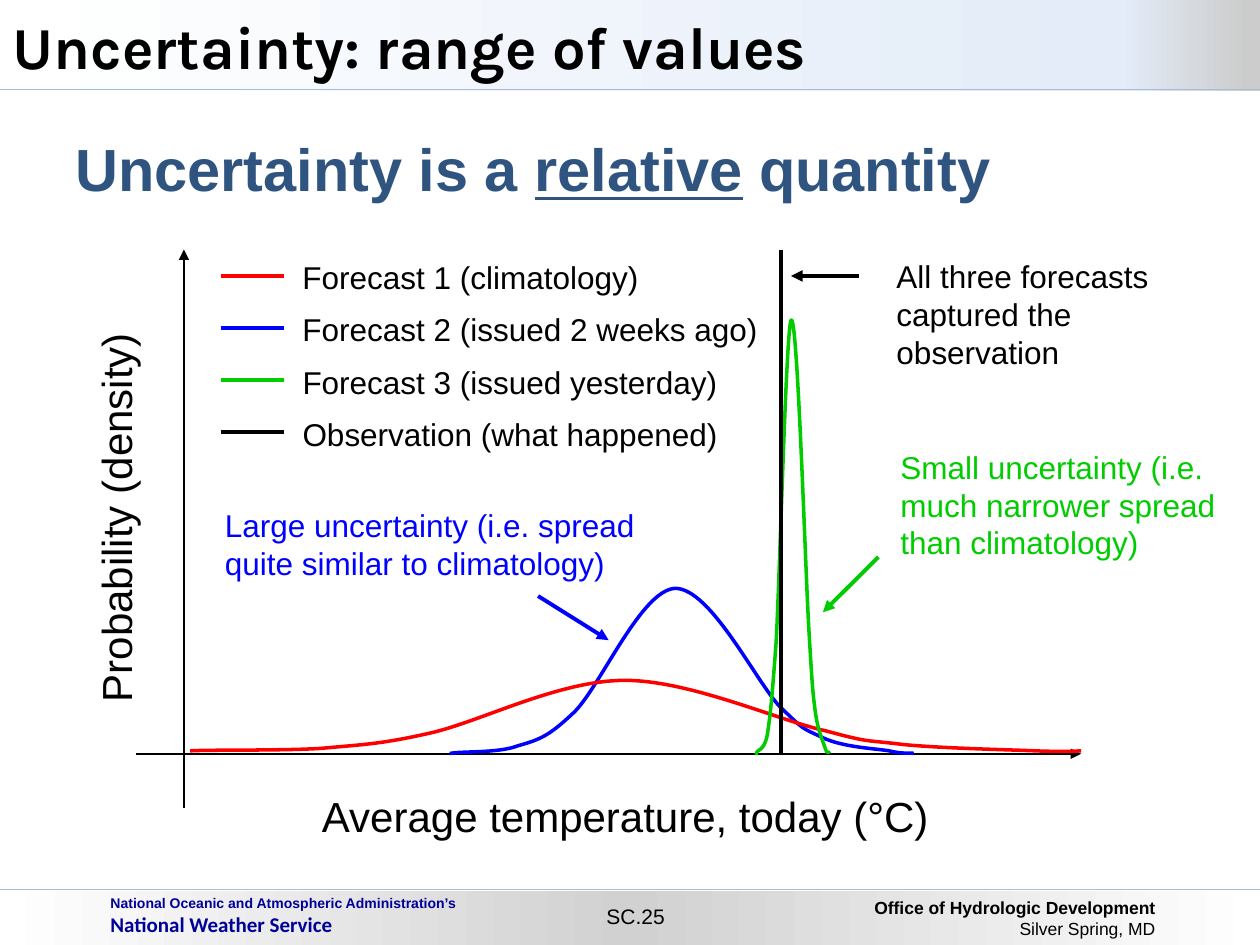
import dataclasses

import lxml.etree
import pptx
import pptx.dml.color
import pptx.enum.shapes
import pptx.enum.text
import pptx.oxml.ns
import pptx.util

Pt = pptx.util.Pt
RGBColor = pptx.dml.color.RGBColor
qn = pptx.oxml.ns.qn
ALIGN = pptx.enum.text.PP_ALIGN
ANCHOR = pptx.enum.text.MSO_ANCHOR

BLACK = RGBColor(0, 0, 0)
WHITE = RGBColor(255, 255, 255)
RED = RGBColor(255, 0, 0)
BLUE = RGBColor(0, 0, 255)
GREEN = RGBColor(0, 0xCC, 0)
NAVY = RGBColor(0, 0, 0x99)
STEEL = RGBColor(0x30, 0x54, 0x80)
RULE = RGBColor(0xA4, 0xBD, 0xDC)
PALE_BLUE = RGBColor(0xE3, 0xEC, 0xF8)
SILVER = RGBColor(0xCC, 0xCC, 0xCC)
GREY = RGBColor(0xD1, 0xD1, 0xD1)

CLIMATOLOGY = [
    (38.7, 289.1), (50.2, 288.4), (90.6, 289.1), (113.6, 287.7), (136.6, 285.5),
    (146.7, 285.5), (175.5, 279), (204.3, 272.6), (249, 248.8), (287.1, 248.8),
    (324.6, 248.8), (375, 271.8), (401.6, 277.6), (428.2, 284.8), (423.2, 282.6),
    (446.2, 285.5), (469.3, 287.7), (504.6, 288.4), (521.8, 289.1), (539.1, 289.8),
    (547, 289.1), (547.8, 289.1)]
TWO_WEEKS = [
    (187, 290.6), (193.5, 289.1), (214.4, 290.6), (225.9, 286.2), (238.2, 282.6),
    (243.2, 281.2), (258.3, 266.8), (273.4, 251.7), (296.5, 197), (315.9, 196.2),
    (336.1, 196.2), (362, 249.5), (375.7, 263.9), (390.1, 277.6), (387.2, 275.4),
    (399.4, 281.2), (411, 287), (429.7, 287.7), (438.3, 289.1), (447, 291.3),
    (452, 289.8), (452, 290.6)]
YESTERDAY = [
    (362, 291.3), (362.7, 287), (366.3, 290.6), (368.5, 279.8), (369.9, 269.7),
    (370.6, 266.8), (373.5, 227.2), (375.7, 187.6), (379.3, 43.6), (382.2, 42.9),
    (385.8, 41.4), (390.1, 182.6), (392.2, 219.3), (394.4, 256.7), (394.4, 254.6),
    (395.8, 266.1), (397.3, 277.6), (400.2, 283.4), (401.6, 287.7), (403, 292),
    (403.8, 288.4), (403.8, 290.6)]


@dataclasses.dataclass
class Box:
    left: float
    top: float
    width: float
    height: float

    def inner(self, left, top, width, height):
        return Box(self.left + left, self.top + top, width, height)

    def lengths(self):
        return Pt(self.left), Pt(self.top), Pt(self.width), Pt(self.height)


def place(shape, box):
    shape.left, shape.top, shape.width, shape.height = box.lengths()


def format_paragraph(paragraph, size, color, bold=False, name="Arial", align=ALIGN.LEFT):
    paragraph.alignment = align
    font = paragraph.font
    font.size, font.bold, font.name = Pt(size), bold, name
    font.color.rgb = color


def add_label(slide, box, text, size=18, color=BLACK, wrap=True, align=ALIGN.LEFT):
    shape = slide.shapes.add_textbox(*box.lengths())
    shape.text_frame.word_wrap = wrap
    paragraph = shape.text_frame.paragraphs[0]
    paragraph.text = text
    format_paragraph(paragraph, size, color, align=align)
    return shape


def add_line(slide, box, start, end, color=BLACK, width=2.25, arrow=False):
    (x1, y1), (x2, y2) = start, end
    connector = slide.shapes.add_connector(
        pptx.enum.shapes.MSO_CONNECTOR.STRAIGHT,
        Pt(box.left + x1), Pt(box.top + y1), Pt(box.left + x2), Pt(box.top + y2))
    connector.line.color.rgb = color
    connector.line.width = Pt(width)
    if arrow:
        line = connector.element.spPr.find(qn("a:ln"))
        lxml.etree.SubElement(line, qn("a:tailEnd"), type="triangle")
    lxml.etree.SubElement(connector.element.spPr, qn("a:effectLst"))


def add_band(slide, box, stops):
    band = slide.shapes.add_shape(pptx.enum.shapes.MSO_SHAPE.RECTANGLE, *box.lengths())
    band.shadow.inherit = False
    band.line.fill.background()
    band.fill.gradient()
    band.fill.gradient_angle = 0
    stop_list = band.element.xpath(".//a:gsLst")[0]
    for stop in list(stop_list):
        stop_list.remove(stop)
    for position, color in stops:
        stop = lxml.etree.SubElement(stop_list, qn("a:gs"), pos=str(position * 1000))
        lxml.etree.SubElement(stop, qn("a:srgbClr"), val=str(color))
    return band


def add_curve(slide, box, points, color):
    start, *controls = [(Pt(x), Pt(y)) for x, y in points]
    builder = slide.shapes.build_freeform(*start)
    builder.add_line_segments(controls, close=False)
    curve = builder.convert_to_shape(Pt(box.left), Pt(box.top))
    segments = curve.element.xpath(".//a:lnTo")
    for first in range(0, len(segments), 3):
        bezier = lxml.etree.Element(qn("a:cubicBezTo"))
        segments[first].addprevious(bezier)
        for segment in segments[first:first + 3]:
            bezier.append(segment[0])
            segment.getparent().remove(segment)
    curve.shadow.inherit = False
    curve.fill.background()
    curve.line.color.rgb = color
    curve.line.width = Pt(2)


def add_header(slide, box):
    title = slide.shapes.title
    band = add_band(slide, box, [(0, WHITE), (89, PALE_BLUE), (99, SILVER)])
    title.element.addprevious(band.element)
    add_line(slide, box, (0, box.height - 0.7), (box.width, box.height - 0.7), RULE, 0.75)
    place(title, box)
    frame = title.text_frame
    frame.text = "Uncertainty: range of values"
    frame.auto_size = pptx.enum.text.MSO_AUTO_SIZE.NONE
    frame.vertical_anchor = ANCHOR.MIDDLE
    format_paragraph(frame.paragraphs[0], 34, BLACK, True, "Karla")


def add_statement(slide, box):
    body = slide.placeholders[1]
    place(body, box)
    body.fill.solid()
    body.fill.fore_color.rgb = WHITE
    frame = body.text_frame
    frame.auto_size = pptx.enum.text.MSO_AUTO_SIZE.NONE
    frame.margin_top = Pt(3.6)
    paragraph = frame.paragraphs[0]
    properties = paragraph._p.get_or_add_pPr()
    properties.set("marL", "0")
    properties.set("indent", "0")
    lxml.etree.SubElement(properties, qn("a:buNone"))
    paragraph.space_before = Pt(0)
    for text, underline in [("Uncertainty is a ", False), ("relative", True), (" quantity", False)]:
        run = paragraph.add_run()
        run.text = text
        run.font.underline = underline
    format_paragraph(paragraph, 34, STEEL, True)


def add_plot(slide, box):
    baseline = 290.7
    add_line(slide, box, (35.1, 321.5), (35.1, 2.6), width=1, arrow=True)
    add_line(slide, box, (7.8, baseline), (547.8, baseline), width=1, arrow=True)
    for points, color in [(TWO_WEEKS, BLUE), (CLIMATOLOGY, RED), (YESTERDAY, GREEN)]:
        add_curve(slide, box, points, color)
    add_line(slide, box, (376.4, baseline), (376.4, 2.6))
    add_label(slide, box.inner(102.6, 308.2, 369.4, 36), "Average temperature, today (°C)",
              24, wrap=False, align=ALIGN.CENTER)
    axis_title = add_label(slide, box.inner(-117.8, 136.5, 227.5, 36), "Probability (density)",
                           24, wrap=False)
    axis_title.rotation = 270


def add_legend(slide, box):
    entries = [("Forecast 1 (climatology)", RED, 208), ("Forecast 2 (issued 2 weeks ago)", BLUE, 277),
               ("Forecast 3 (issued yesterday)", GREEN, 254), ("Observation (what happened)", BLACK, 254)]
    pitch = box.height / len(entries)
    for index, (text, color, width) in enumerate(entries):
        top = index * pitch
        add_line(slide, box, (0, top + 13.6), (36, top + 13.6), color)
        add_label(slide, box.inner(39.8, top, width, 29), text, wrap=False)


def add_callout(slide, box, text, color, start, end):
    add_label(slide, box, text, color=color)
    add_line(slide, box, start, end, color, arrow=True)


def add_footer(slide, box):
    add_band(slide, box, [(0, WHITE), (50, GREY), (100, WHITE)])
    add_line(slide, box, (0, -0.7), (box.width, -0.7), RULE, 0.75)
    agency = add_label(slide, box.inner(56, -1.4, 240, 31),
                       "National Oceanic and Atmospheric Administration’s", 8, NAVY)
    office = add_label(slide, box.inner(480, 0, 187.2, 31), "Office of Hydrologic Development", 10)
    for shape, text, size, bold, name, align in [
            (agency, "National Weather Service", 12, True, "Calibri", ALIGN.LEFT),
            (office, "Silver Spring, MD", 10, False, "Arial", ALIGN.RIGHT)]:
        first = shape.text_frame.paragraphs[0]
        first.font.bold = True
        first.alignment = align
        second = shape.text_frame.add_paragraph()
        second.text = text
        format_paragraph(second, size, NAVY if shape is agency else BLACK, bold, name, align)
    add_label(slide, box.inner(338.4, 3.6, 49.7, 21.6), "SC.25", 12, wrap=False, align=ALIGN.CENTER)


def main():
    presentation = pptx.Presentation()
    presentation.slide_width, presentation.slide_height = Pt(720), Pt(540)
    slide = presentation.slides.add_slide(presentation.slide_layouts[1])
    add_header(slide, Box(0, 0, 720, 52))
    add_statement(slide, Box(36, 72, 684, 48))
    add_plot(slide, Box(70, 140, 550, 330))
    add_legend(slide, Box(126, 144, 320, 119.2))
    add_callout(slide, Box(505.2, 143.3, 193.7, 72.7), "All three forecasts captured the observation",
                BLACK, (-14.4, 14.4), (-53.2, 14.4))
    add_callout(slide, Box(507.4, 252.3, 195.1, 72.7),
                "Small uncertainty (i.e. much narrower spread than climatology)",
                GREEN, (-5.4, 66), (-37.2, 97.6))
    add_callout(slide, Box(121.5, 285.8, 249.1, 51),
                "Large uncertainty (i.e. spread quite similar to climatology)",
                BLUE, (186, 54.8), (226.3, 80))
    add_footer(slide, Box(0, 509, 720, 31))
    presentation.save("out.pptx")


if __name__ == "__main__":
    main()
